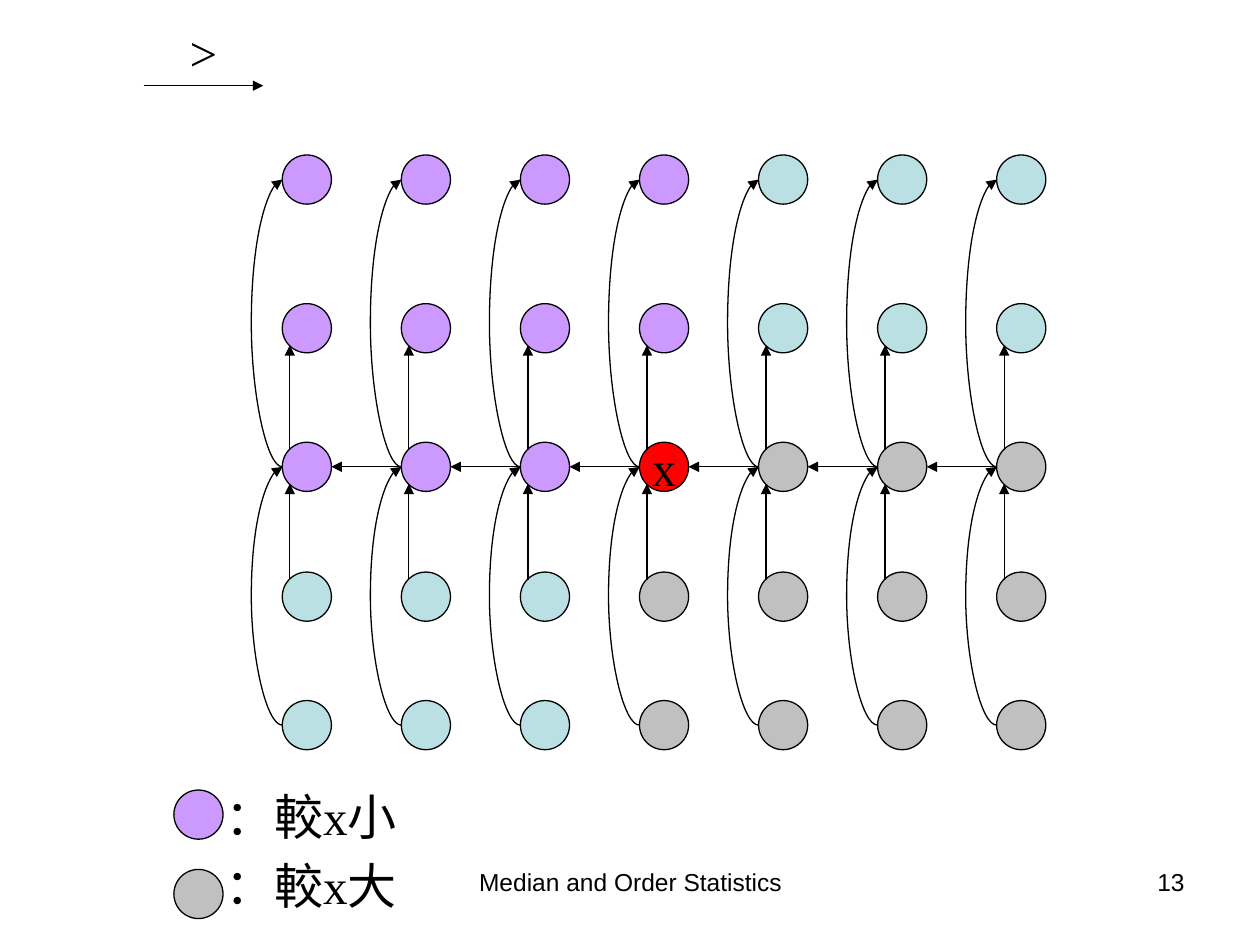
from dataclasses import dataclass

from lxml import etree
from pptx import Presentation
from pptx import util as u
from pptx.dml.color import RGBColor
from pptx.enum import shapes, text
from pptx.oxml.ns import qn

COLORS = {
    "smaller": "CC99FF",
    "larger": "C0C0C0",
    "unknown": "BBE0E3",
    "median": "FF0000",
    "ink": "000000",
}
SERIF, SANS = "Times New Roman", "Arial"

COLUMNS = 7
COLUMN_STEP = 0.945
GRID_LEFT = 2.24
ROW_TOPS = (1.23, 2.41, 3.51, 4.54, 5.56)
MIDDLE_ROW, MIDDLE_COLUMN = 2, 3
DIAMETER = 0.39
RADIUS = DIAMETER / 2
CORNER = 0.06  # inset of the circle's diagonal points from its bounding box
BULGE = 0.25
CURVE_WIDTH = 0.002


@dataclass(frozen=True)
class Label:
    content: str
    left: float
    top: float
    width: float
    height: float
    size: int = 28
    font: str = SERIF
    align: text.PP_ALIGN = text.PP_ALIGN.LEFT


LABELS = (
    Label("Median and Order Statistics", 3.42, 6.83, 3.17, 0.52, 14, SANS, text.PP_ALIGN.CENTER),
    Label("13", 7.17, 6.83, 2.33, 0.52, 14, SANS, text.PP_ALIGN.RIGHT),
    Label(">", 1.3, 0.13, 0.63, 0.57, align=text.PP_ALIGN.CENTER),
    Label("：較x小", 1.69, 6.19, 2.28, 0.57),
    Label("：較x大", 1.69, 6.74, 2.28, 0.57),
)
LEGEND = (("smaller", 6.27), ("larger", 6.9))


def write(shape, content: str, *, size: int = 28, font: str = SERIF,
          align=text.PP_ALIGN.CENTER, anchor=text.MSO_ANCHOR.TOP, wrap: bool = True) -> None:
    frame = shape.text_frame
    frame.word_wrap = wrap
    frame.vertical_anchor = anchor
    paragraph = frame.paragraphs[0]
    paragraph.alignment = align
    run = paragraph.add_run()
    run.text = content
    run.font.size = u.Pt(size)
    run.font.name = font
    run.font.color.rgb = RGBColor.from_string(COLORS["ink"])


def add_label(slide, label: Label) -> None:
    box = slide.shapes.add_textbox(
        *map(u.Inches, (label.left, label.top, label.width, label.height)))
    write(box, label.content, size=label.size, font=label.font, align=label.align)


def add_circle(slide, left: float, top: float, color: str):
    circle = slide.shapes.add_shape(
        shapes.MSO_SHAPE.OVAL, *map(u.Inches, (left, top, DIAMETER, DIAMETER)))
    circle.shadow.inherit = False
    circle.fill.solid()
    circle.fill.fore_color.rgb = RGBColor.from_string(COLORS[color])
    circle.line.color.rgb = RGBColor.from_string(COLORS["ink"])
    circle.line.width = u.Pt(0.75)
    return circle


def add_arrow(slide, start: tuple[float, float], end: tuple[float, float],
              kind=shapes.MSO_CONNECTOR.STRAIGHT):
    arrow = slide.shapes.add_connector(kind, *map(u.Inches, (*start, *end)))
    arrow.line.color.rgb = RGBColor.from_string(COLORS["ink"])
    arrow.line.width = u.Pt(0.75)
    etree.SubElement(arrow.line._get_or_add_ln(), qn("a:tailEnd"), type="triangle")
    etree.SubElement(arrow._element.spPr, qn("a:effectLst"))
    return arrow


def add_arc(slide, x: float, bottom: float, top: float) -> None:
    """Draw an upward curved arrow that bulges to the left."""
    arc = add_arrow(slide, (x, bottom), (x + CURVE_WIDTH, top), shapes.MSO_CONNECTOR.CURVE)
    properties = arc._element.spPr
    transform = properties.find(qn("a:xfrm"))
    transform.attrib.pop("flipV", None)
    transform.set("rot", "10800000")
    transform.set("flipH", "1")
    geometry = properties.find(qn("a:prstGeom"))
    adjustments = geometry.find(qn("a:avLst"))
    if adjustments is None:
        adjustments = etree.SubElement(geometry, qn("a:avLst"))
    share = round(-BULGE / CURVE_WIDTH * 100000)
    etree.SubElement(adjustments, qn("a:gd"), name="adj1", fmla=f"val {share}")


def column_left(column: int) -> float:
    return GRID_LEFT + column * COLUMN_STEP


def circle_color(row: int, column: int) -> str:
    if (row, column) == (MIDDLE_ROW, MIDDLE_COLUMN):
        return "median"
    if row <= MIDDLE_ROW and column <= MIDDLE_COLUMN:
        return "smaller"
    if row >= MIDDLE_ROW and column >= MIDDLE_COLUMN:
        return "larger"
    return "unknown"


def add_circles(slide) -> None:
    for row, top in enumerate(ROW_TOPS):
        for column in range(COLUMNS):
            color = circle_color(row, column)
            circle = add_circle(slide, column_left(column), top, color)
            if color == "median":
                write(circle, "x", anchor=text.MSO_ANCHOR.MIDDLE, wrap=False)


def add_order_arrows(slide) -> None:
    centers = [top + RADIUS for top in ROW_TOPS]
    middle = centers[MIDDLE_ROW]
    for column in range(COLUMNS):
        left = column_left(column)
        for lower, upper in ((2, 0), (4, 2)):
            add_arc(slide, left, centers[lower], centers[upper])
        for lower, upper in ((2, 1), (3, 2)):
            add_arrow(slide, (left + CORNER, ROW_TOPS[lower] + CORNER),
                      (left + CORNER, ROW_TOPS[upper] + DIAMETER - CORNER))
        if column:
            add_arrow(slide, (left, middle), (column_left(column - 1) + DIAMETER, middle))


def main() -> None:
    presentation = Presentation()
    presentation.slide_width, presentation.slide_height = u.Inches(10), u.Inches(7.5)
    slide = presentation.slides.add_slide(presentation.slide_layouts[6])
    add_circles(slide)
    add_order_arrows(slide)
    add_arrow(slide, (1.14, 0.68), (2.09, 0.68))
    for color, top in LEGEND:
        add_circle(slide, 1.38, top, color)
    for label in LABELS:
        add_label(slide, label)
    presentation.save("out.pptx")


if __name__ == "__main__":
    main()
